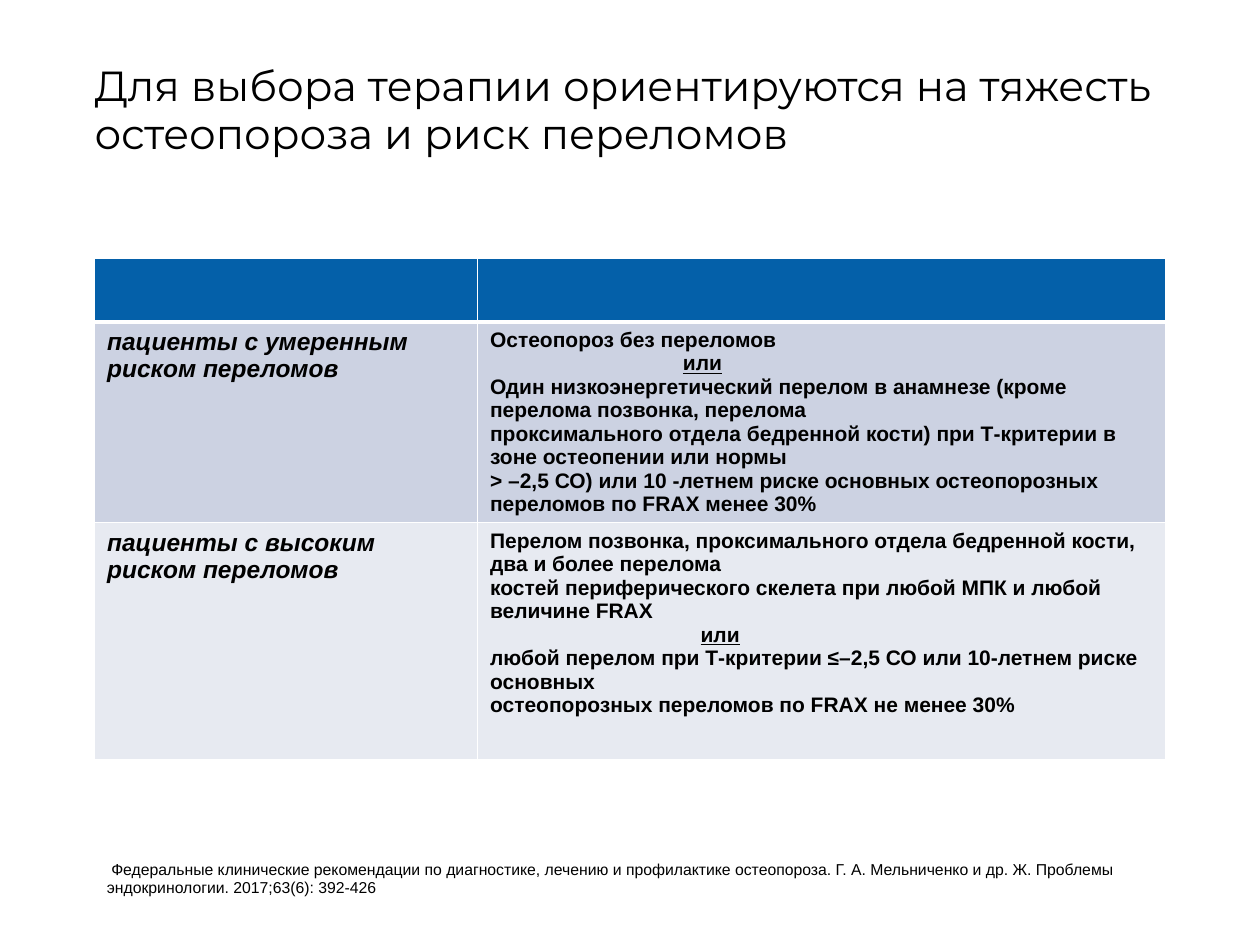
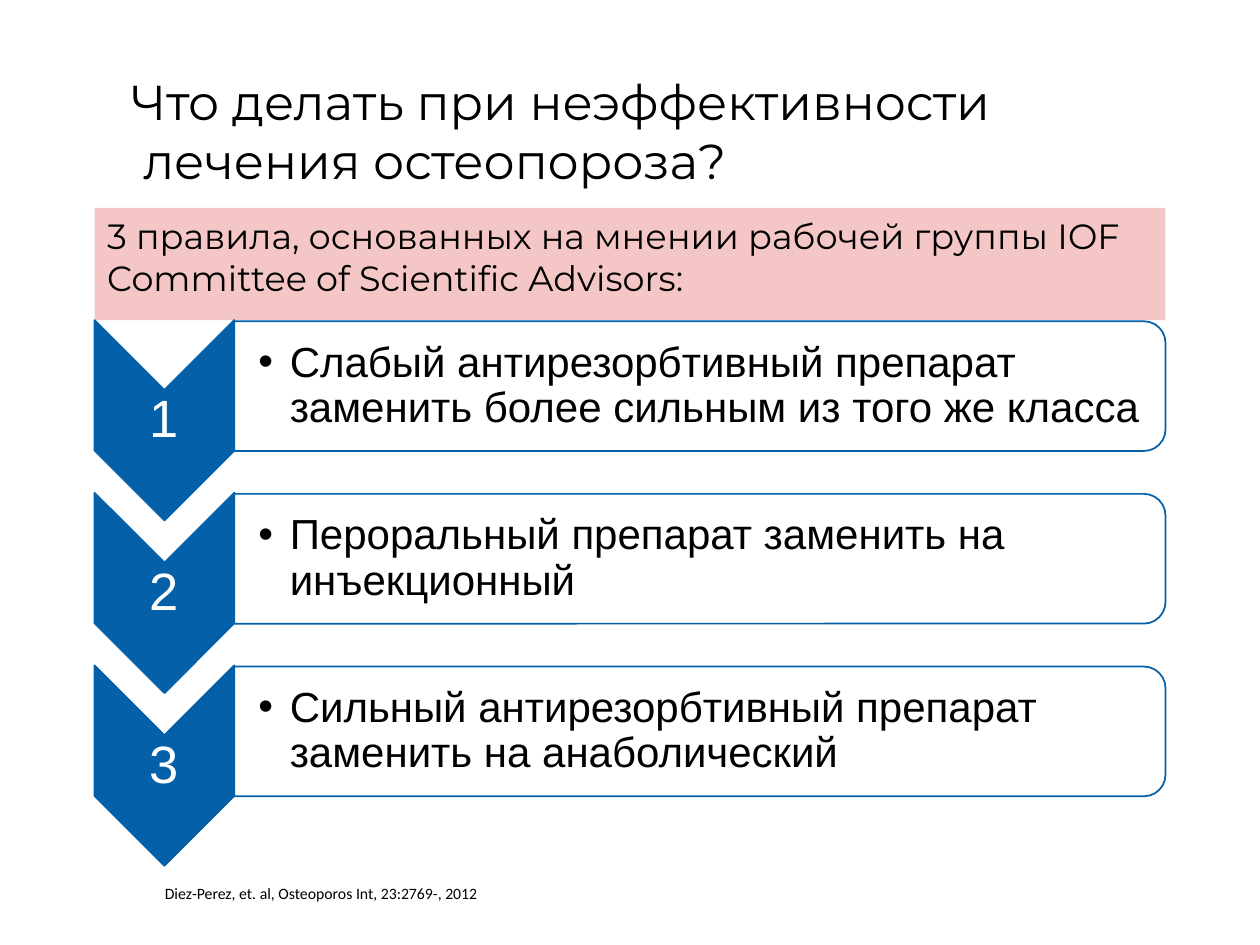
from lxml import etree
from pptx import Presentation
from pptx.dml.color import RGBColor
from pptx.enum.shapes import MSO_SHAPE
from pptx.enum.text import MSO_ANCHOR, MSO_AUTO_SIZE, PP_ALIGN
from pptx.oxml.ns import qn
from pptx.util import Inches, Pt

BLUE = RGBColor(0x04, 0x60, 0xA9)
PINK = RGBColor(0xF4, 0xC7, 0xC6)
DARK = RGBColor(0xCC, 0xD2, 0xE2)
PALE = RGBColor(0xE7, 0xEA, 0xF1)
WHITE = RGBColor(0xFF, 0xFF, 0xFF)
BLACK = RGBColor(0, 0, 0)
HEAD, TEXT, NOTE = "Montserrat", "Arial", "Calibri"
LEFT, MID = PP_ALIGN.LEFT, PP_ALIGN.CENTER
TOP, CENTER = MSO_ANCHOR.TOP, MSO_ANCHOR.MIDDLE
FIXED = MSO_AUTO_SIZE.NONE
RECT, CHEVRON, PANEL = MSO_SHAPE.RECTANGLE, MSO_SHAPE.CHEVRON, MSO_SHAPE.ROUND_2_SAME_RECTANGLE
EDGE, FULL, STEP = 7.5, 85, 18.27

deck = Presentation()
deck.slide_width, deck.slide_height = Inches(10), Inches(7.5)
W, H = deck.slide_width, deck.slide_height


def area(left, top, wide, high):
    return [int(side * part / 100) for side, part in zip((W, H, W, H), (left, top, wide, high))]


def write(frame, lines, size, font, color=BLACK, align=LEFT, space=1.0):
    frame.text = "\n".join(lines)
    frame.word_wrap = True
    for para in frame.paragraphs:
        props = para._p.get_or_add_pPr()
        props.set("marL", "0")
        props.set("indent", "0")
        para.alignment = align
        para.line_spacing = space
        para.space_before = Pt(0)
        for run in para.runs:
            run.font.size = Pt(size)
            run.font.name = font
            run.font.color.rgb = color
    return frame.paragraphs


risk = deck.slides.add_slide(deck.slide_layouts[5])
rules = deck.slides.add_slide(deck.slide_layouts[1])
heads = [
    (risk, ["Для выбора терапии ориентируются на тяжесть остеопороза и риск переломов"],
     24, 0.95, 0, (EDGE, 6.67, FULL, 14)),
    (rules, ["Что делать при неэффективности", " лечения остеопороза?"],
     28, 1.0, 0.1, (9.36, 6.93, 81.3, 13.87)),
]
for slide, lines, size, space, inset, spot in heads:
    title = slide.shapes.title
    title.left, title.top, title.width, title.height = area(*spot)
    frame = title.text_frame
    write(frame, lines, size, HEAD, space=space)
    frame.auto_size = FIXED
    frame.vertical_anchor = TOP
    frame.margin_left = frame.margin_right = Inches(inset)
    frame.margin_top = frame.margin_bottom = Inches(inset / 2)

rows = [
    ("пациенты с умеренным риском переломов", 1.53, [
        "Остеопороз без переломов",
        "или",
        "Один низкоэнергетический перелом в анамнезе (кроме перелома позвонка, перелома",
        "проксимального отдела бедренной кости) при Т-критерии в зоне остеопении или нормы",
        "> –2,5 СО) или 10 -летнем риске основных остеопорозных переломов по FRAX менее 30%",
    ]),
    ("пациенты с высоким риском переломов", 1.67, [
        "Перелом позвонка, проксимального отдела бедренной кости, два и более перелома",
        "костей периферического скелета при любой МПК и любой величине FRAX",
        "или",
        "любой перелом при Т-критерии ≤–2,5 СО или 10-летнем риске основных",
        "остеопорозных переломов по FRAX не менее 30%",
    ]),
]
table = risk.shapes.add_table(3, 2, *area(EDGE, 27.33, FULL, 50.2)).table
for col, wide in zip(table.columns, (30.4, 54.6)):
    col.width = int(W * wide / 100)
for row, high in zip(table.rows, (6.73, 18.4, 25.07)):
    row.height = int(H * high / 100)
for pos, (group, shift, lines) in enumerate(rows, 1):
    name, rule = table.cell(pos, 0), table.cell(pos, 1)
    for para in write(name.text_frame, [group], 14, TEXT):
        para.runs[0].font.bold = para.runs[0].font.italic = True
    for para in write(rule.text_frame, lines, 12, TEXT):
        para.runs[0].font.bold = True
        if para.text == "или":
            para.runs[0].font.underline = True
            para._p.get_or_add_pPr().set("marL", str(Inches(shift)))
for pos, shade in enumerate((BLUE, DARK, PALE)):
    for cell in table.rows[pos].cells:
        cell.fill.solid()
        cell.fill.fore_color.rgb = shade
        props = cell._tc.get_or_add_tcPr()
        for spot, side in enumerate(("lnL", "lnR", "lnT", "lnB")):
            thick = (pos, side) in ((0, "lnB"), (1, "lnT"))
            line = etree.Element(qn("a:" + side), w=str(Pt(3 if thick else 1)))
            fill = etree.SubElement(line, qn("a:solidFill"))
            etree.SubElement(fill, qn("a:srgbClr"), val=str(WHITE))
            props.insert(spot, line)

cite = risk.shapes.add_shape(RECT, *area(EDGE, 90.27, 88.8, 7.47))
cite.shadow.inherit = False
cite.fill.solid()
cite.fill.fore_color.rgb = WHITE
cite.line.fill.background()
write(cite.text_frame, [
    " Федеральные клинические рекомендации по диагностике, лечению и профилактике остеопороза. "
    "Г. А. Мельниченко и др. Ж. Проблемы эндокринологии. 2017;63(6): 392-426"], 9, TEXT)
cite.text_frame.vertical_anchor = TOP

band = rules.placeholders[1]
band.left, band.top, band.width, band.height = area(EDGE, 22, FULL, 11.87)
band.fill.solid()
band.fill.fore_color.rgb = PINK
paras = write(band.text_frame, [
    "3 правила, основанных на мнении рабочей группы IOF Committee of Scientific Advisors:"], 20, HEAD)
band.text_frame.auto_size = FIXED
band.text_frame.vertical_anchor = TOP
etree.SubElement(paras[0]._p.get_or_add_pPr(), qn("a:buNone"))

steps = [
    "Слабый антирезорбтивный препарат заменить более сильным из того же класса",
    "Пероральный препарат заменить на инъекционный",
    "Сильный антирезорбтивный препарат заменить на анаболический",
]
for pos, step in enumerate(steps):
    drop = pos * STEP
    for kind, shade, spot in (
        (CHEVRON, BLUE, (EDGE, 33.87 + drop, 11.1, 21.2)),
        (PANEL, WHITE, (18.6, 34 + drop, 73.9, 13.73)),
    ):
        left, top, wide, high = area(*spot)
        skew = (wide - high) // 2
        shape = rules.shapes.add_shape(kind, left + skew, top - skew, high, wide)
        shape.rotation = 90
        shape.shadow.inherit = False
        shape.fill.solid()
        shape.fill.fore_color.rgb = shade
        shape.line.color.rgb = BLUE
        shape.line.width = Pt(1)
        if kind == PANEL:
            tint = shape.fill._xPr.find(qn("a:solidFill"))[0]
            etree.SubElement(tint, qn("a:alpha"), val="90000")
    for words, size, color, align, inset, spot in (
        (str(pos + 1), 30, WHITE, MID, 0.02, (EDGE, 41.33 + drop, 11.1, 6.4)),
        (step, 24, BLACK, LEFT, 0.19, (18.6, 34.67 + drop, 73.4, 12.4)),
    ):
        frame = rules.shapes.add_textbox(*area(*spot)).text_frame
        para = write(frame, [words], size, TEXT, color, align, 0.9)[0]
        frame.vertical_anchor = CENTER
        frame.margin_right = frame.margin_top = frame.margin_bottom = Inches(0.02)
        frame.margin_left = Inches(inset)
        if words == step:
            props = para._p.get_or_add_pPr()
            props.set("marL", str(Inches(0.25)))
            props.set("indent", str(-Inches(0.25)))
            etree.SubElement(props, qn("a:buFont"), typeface=TEXT)
            etree.SubElement(props, qn("a:buChar"), char="•")

cite = rules.shapes.add_textbox(*area(12.1, 92.87, 27.3, 3.33))
write(cite.text_frame, ["Diez-Perez, et. al, Osteoporos Int, 23:2769-, 2012"], 9, NOTE)
cite.text_frame.word_wrap = False

deck.save("out.pptx")
